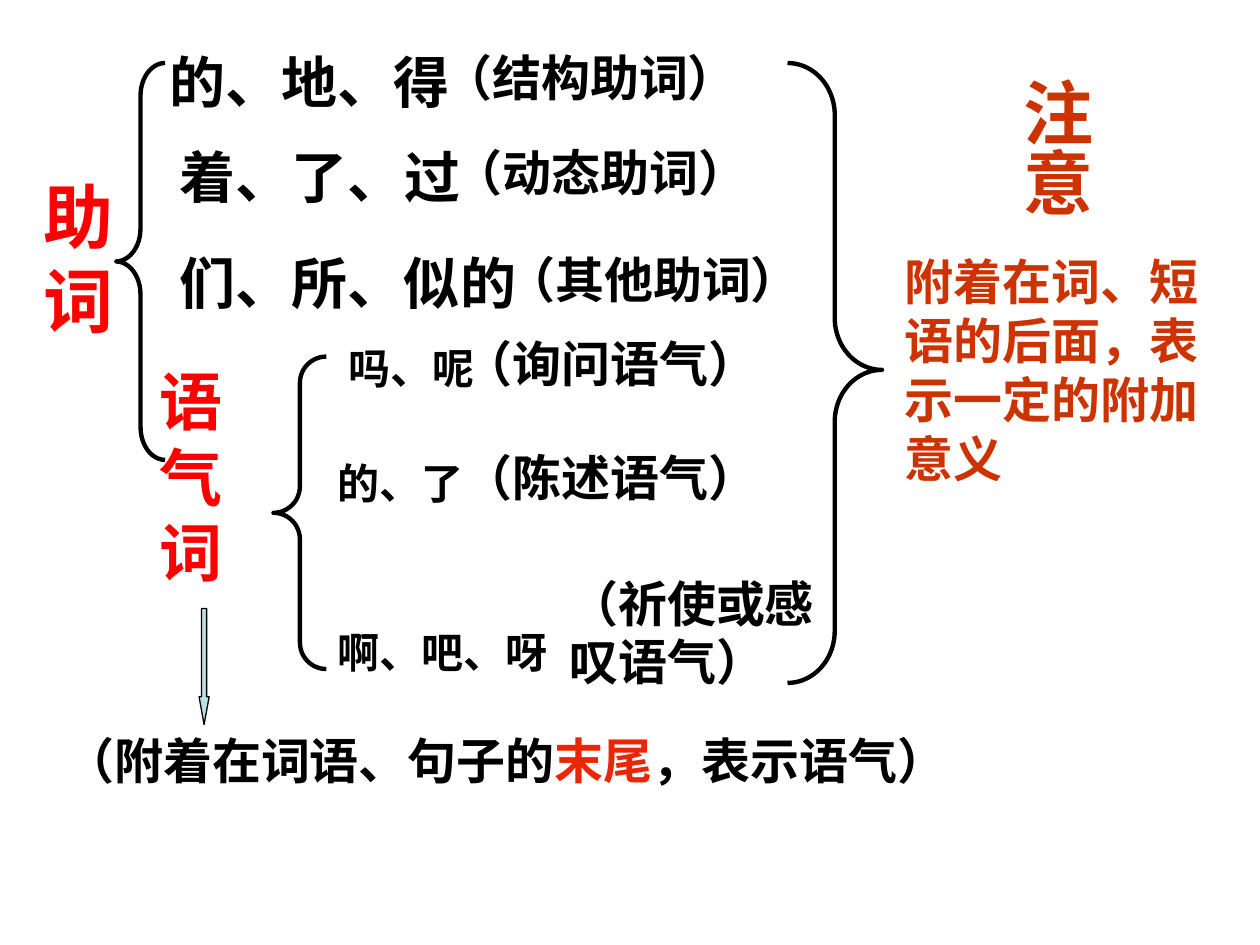
from pptx import Presentation
from pptx.dml.color import RGBColor
from pptx.enum.shapes import MSO_SHAPE as Shape
from pptx.enum.text import MSO_AUTO_SIZE as AutoSize
from pptx.util import Inches, Pt

BLACK = RGBColor(0x00, 0x00, 0x00)
RED = RGBColor(0xFF, 0x00, 0x00)
RUST = RGBColor(0xCC, 0x33, 0x00)
SCARLET = RGBColor(0xE9, 0x26, 0x05)
PALE_BLUE = RGBColor(0xBB, 0xE0, 0xE3)

LABELS = [
    ("助词", 40, RED, (0.25, 1.33, 0.79, 1.43)),
    ("语气词", 36, RED, (1.17, 2.83, 0.79, 1.9)),
    ("附着在词、短语的后面，表示一定的附加意义", 28, RUST, (7.08, 1.95, 2.68, 1.97)),
]
PARTICLES = [
    ("的、地、得", 32, (1.25, 0.33, 2.83, 0.63)),
    ("着、了、过", 32, (1.33, 1.08, 3.98, 0.63)),
    ("们、所、似的", 32, (1.33, 1.92, 3.7, 0.63)),
    ("吗、呢", 24, (2.67, 2.67, 1.33, 0.5)),
    ("的、了", 24, (2.58, 3.58, 1.33, 0.5)),
    ("啊、吧、呀", 24, (2.58, 4.92, 2.17, 0.5)),
]
CATEGORIES = [
    ("（结构助词）", (3.42, 0.33, 2.91, 0.57)),
    ("（动态助词）", (3.5, 1.08, 2.91, 0.57)),
    ("（其他助词）", (3.92, 1.93, 2.91, 0.57)),
    ("（询问语气）", (3.58, 2.6, 2.91, 0.57)),
    ("（陈述语气）", (3.58, 3.5, 2.91, 0.57)),
    ("（祈使或感叹语气）", (4.42, 4.5, 2.36, 1.03)),
]
BRACES = [
    (Shape.LEFT_BRACE, (0.92, 0.5, 0.39, 3.15), (0.67, 0.5)),
    (Shape.LEFT_BRACE, (2.17, 2.83, 0.42, 2.48), (0.5, 0.5)),
    (Shape.RIGHT_BRACE, (6.25, 0.5, 0.75, 4.92), (0.55, 0.495)),
]


def add_text(slide, parts, size, box):
    """Add a bold text box whose parts are (text, colour) pairs."""
    label = slide.shapes.add_textbox(*map(Inches, box))
    frame = label.text_frame
    frame.word_wrap = True
    frame.auto_size = AutoSize.SHAPE_TO_FIT_TEXT
    paragraph = frame.paragraphs[0]
    paragraph.font.name = "Arial"
    paragraph.font.size = Pt(size)
    paragraph.font.bold = True
    for text, colour in parts:
        run = paragraph.add_run()
        run.text = text
        run.font.color.rgb = colour
    return frame


def add_vertical_text(slide, text, size, colour, box):
    """Add a bold text box that reads from top to bottom."""
    frame = add_text(slide, [(text, colour)], size, box)
    frame.word_wrap = False
    frame._txBody.bodyPr.set("vert", "eaVert")


def add_outline(slide, kind, box, adjustments, width):
    """Add an unfilled preset shape with a black line."""
    outline = slide.shapes.add_shape(kind, *map(Inches, box))
    outline.shadow.inherit = False
    outline.fill.background()
    outline.line.color.rgb = BLACK
    outline.line.width = Pt(width)
    for index, value in enumerate(adjustments):
        outline.adjustments[index] = value
    return outline


def main():
    """Build the slide on particles and save it."""
    deck = Presentation()
    deck.slide_width, deck.slide_height = Inches(10), Inches(7.5)
    slide = deck.slides.add_slide(deck.slide_layouts[6])

    add_vertical_text(slide, "注意", 40, RUST, (7.89, 0.52, 0.87, 1.19))
    for text, size, colour, box in LABELS:
        add_text(slide, [(text, colour)], size, box)
    for kind, box, adjustments in BRACES:
        add_outline(slide, kind, box, adjustments, 2.5)
    for text, size, box in PARTICLES:
        add_text(slide, [(text, BLACK)], size, box)
    for text, box in CATEGORIES:
        add_text(slide, [(text, BLACK)], 28, box)

    usage = [("（附着在词语、句子的", BLACK), ("末尾", SCARLET), ("，表示语气）", BLACK)]
    add_text(slide, usage, 28, (0.42, 5.75, 7.98, 0.57))
    arrow = add_outline(slide, Shape.DOWN_ARROW, (1.58, 4.83, 0.08, 0.92), (0.5, 2.75), 0.75)
    arrow.fill.solid()
    arrow.fill.fore_color.rgb = PALE_BLUE

    deck.save("out.pptx")


if __name__ == "__main__":
    main()
